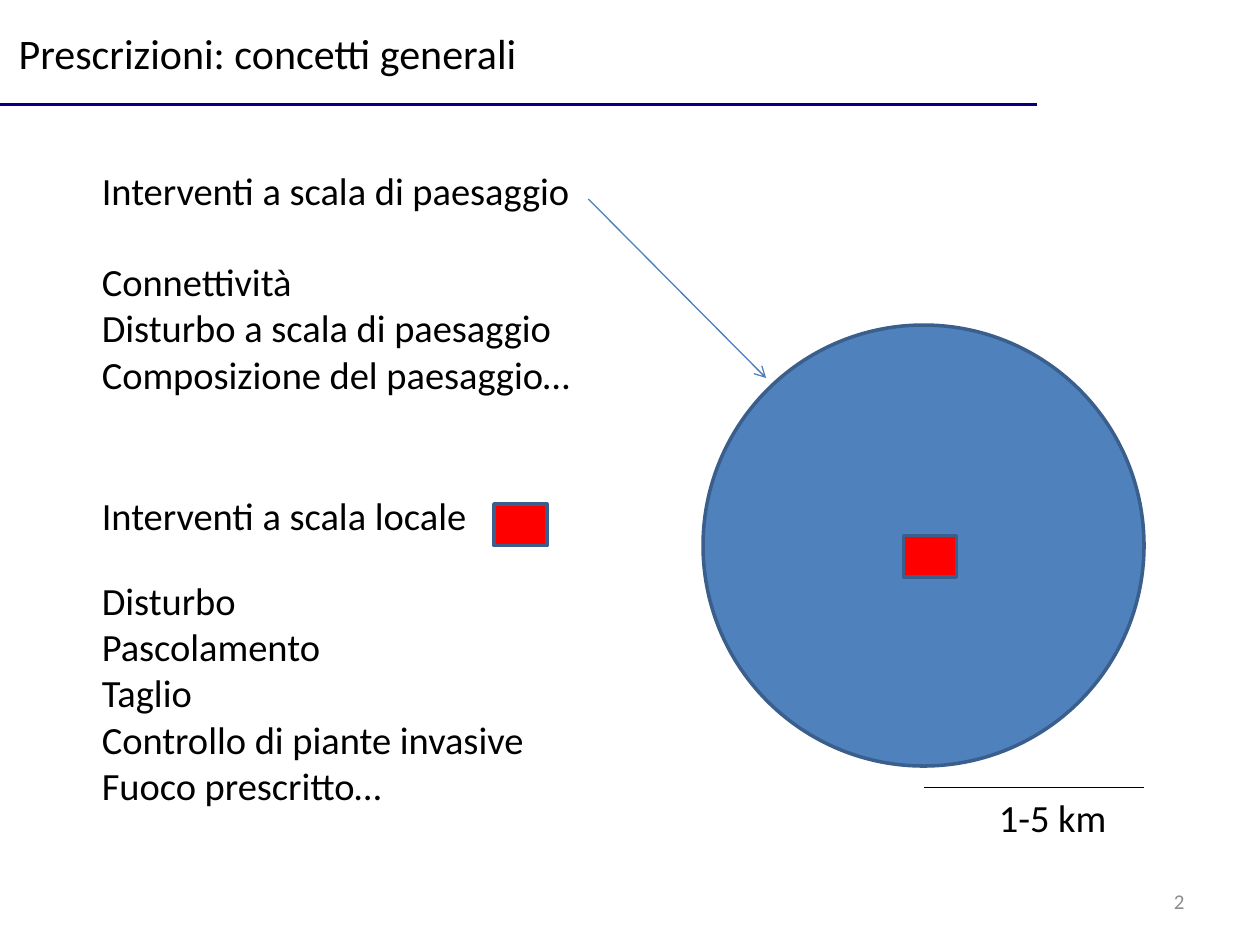
from dataclasses import dataclass

import pptx
import pptx.dml.color
import pptx.enum.shapes
import pptx.enum.text
import pptx.oxml.ns
import pptx.util
from lxml import etree

Inches = pptx.util.Inches
Shape = pptx.enum.shapes.MSO_SHAPE
Align = pptx.enum.text.PP_ALIGN
Anchor = pptx.enum.text.MSO_ANCHOR

OUTLINE = "3A5F8C"
TEXT_LEFT, TEXT_WIDTH = 0.71, 5.54


@dataclass
class Figure:
    kind: Shape
    left: float
    top: float
    width: float
    height: float
    fill: str


@dataclass
class Line:
    start: tuple[float, float]
    end: tuple[float, float]
    color: str
    width: float = 0.75
    arrow: bool = False


@dataclass
class TextBlock:
    top: float
    height: float
    lines: list[str]


FIGURES = [
    Figure(Shape.OVAL, 5.58, 2.58, 3.5, 3.5, "4F81BD"),
    Figure(Shape.RECTANGLE, 7.17, 4.25, 0.42, 0.33, "FF0000"),
    Figure(Shape.RECTANGLE, 3.92, 4, 0.42, 0.33, "FF0000"),
]

LINES = [
    Line((0, 0.83), (8.23, 0.83), "000080", width=2),
    Line((4.67, 1.58), (6.08, 3), "4B7EBC", arrow=True),
    Line((7.33, 6.25), (9.08, 6.25), "000000"),
]

TEXT_BLOCKS = [
    TextBlock(1.28, 0.47, ["Interventi a scala di paesaggio"]),
    TextBlock(2, 1.58, ["Connettività", "Disturbo a scala di paesaggio", "Composizione del paesaggio…"]),
    TextBlock(3.86, 0.47, ["Interventi a scala locale"]),
    TextBlock(4.53, 2.32, ["Disturbo", "Pascolamento", "Taglio",
                           "Controllo di piante invasive", "Fuoco prescritto…"]),
]


def rgb(value: str) -> pptx.dml.color.RGBColor:
    return pptx.dml.color.RGBColor.from_string(value)


def add_text(page, lines: list[str], left: float, top: float, width: float, height: float, *,
             size: float = 22, color: str = "000000", align=Align.LEFT,
             anchor=Anchor.TOP, wrap: bool = True) -> None:
    box = page.shapes.add_textbox(Inches(left), Inches(top), Inches(width), Inches(height))
    frame = box.text_frame
    frame.word_wrap = wrap
    frame.vertical_anchor = anchor
    for index, line in enumerate(lines):
        para = frame.paragraphs[0] if index == 0 else frame.add_paragraph()
        para.alignment = align
        span = para.add_run()
        span.text = line
        span.font.name = "Calibri"
        span.font.size = pptx.util.Pt(size)
        span.font.color.rgb = rgb(color)


def add_figure(page, figure: Figure) -> None:
    shape = page.shapes.add_shape(figure.kind, Inches(figure.left), Inches(figure.top),
                                  Inches(figure.width), Inches(figure.height))
    shape.shadow.inherit = False
    shape.fill.solid()
    shape.fill.fore_color.rgb = rgb(figure.fill)
    shape.line.color.rgb = rgb(OUTLINE)
    shape.line.width = pptx.util.Pt(2)


def add_line(page, line: Line) -> None:
    connector = page.shapes.add_connector(
        pptx.enum.shapes.MSO_CONNECTOR.STRAIGHT,
        *(Inches(value) for value in line.start + line.end))
    connector.line.color.rgb = rgb(line.color)
    connector.line.width = pptx.util.Pt(line.width)
    if line.arrow:
        outline = connector.line._get_or_add_ln()
        etree.SubElement(outline, pptx.oxml.ns.qn("a:tailEnd"), type="arrow")
    etree.SubElement(connector._element.spPr, pptx.oxml.ns.qn("a:effectLst"))


def main() -> None:
    """Build the slide on landscape-scale and local-scale prescriptions."""
    deck = pptx.Presentation()
    deck.slide_width, deck.slide_height = Inches(10), Inches(7.5)
    page = deck.slides.add_slide(deck.slide_layouts[6])
    for figure in FIGURES:
        add_figure(page, figure)
    for line in LINES:
        add_line(page, line)
    add_text(page, ["Prescrizioni: concetti generali"], 0.05, 0.17, 4.3, 0.5, size=24, wrap=False)
    for block in TEXT_BLOCKS:
        add_text(page, block.lines, TEXT_LEFT, block.top, TEXT_WIDTH, block.height)
    add_text(page, ["1-5 km"], 7.83, 6.25, 2.17, 0.47)
    add_text(page, ["2"], 7.17, 6.95, 2.33, 0.4, size=12, color="8C8C8C",
             align=Align.RIGHT, anchor=Anchor.MIDDLE)
    deck.save("out.pptx")


if __name__ == "__main__":
    main()
